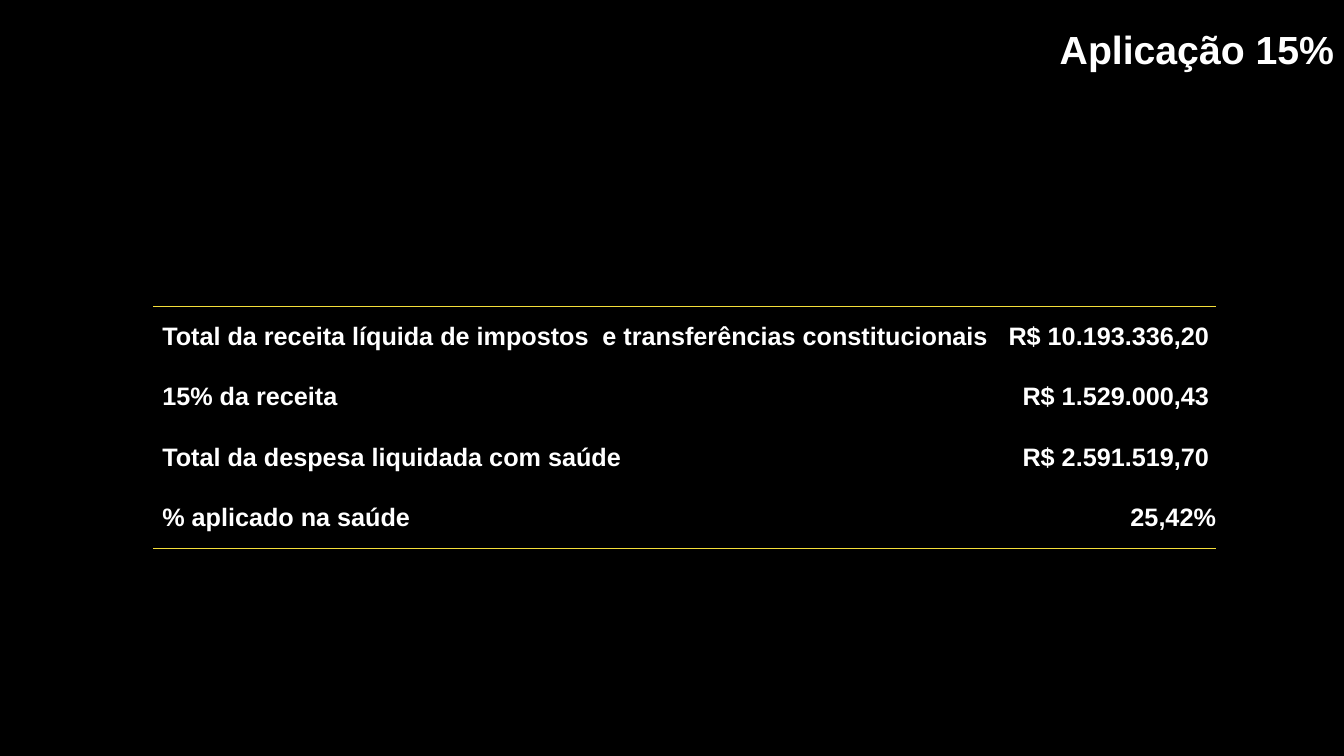
from lxml import etree
from pptx import Presentation
from pptx import util as u
from pptx.dml.color import RGBColor
from pptx.enum import text
from pptx.oxml import ns

BLACK = RGBColor(0x00, 0x00, 0x00)
WHITE = RGBColor(0xFF, 0xFF, 0xFF)
YELLOW = RGBColor(0xF4, 0xDE, 0x3A)

HEALTH_SPENDING = [
    ("Total da receita líquida de impostos  e transferências constitucionais", " R$ 10.193.336,20 "),
    ("15% da receita", " R$ 1.529.000,43 "),
    ("Total da despesa liquidada com saúde", " R$ 2.591.519,70 "),
    ("% aplicado na saúde", "25,42%"),
]


class SlideBuilder:
    font_name = "Arial"

    def __init__(self, slide):
        self.slide = slide
        background = slide.background.fill
        background.solid()
        background.fore_color.rgb = BLACK

    def add_text(self, paragraph, words, size, alignment):
        paragraph.alignment = alignment
        run = paragraph.add_run()
        run.text = words
        run.font.name = self.font_name
        run.font.size = u.Pt(size)
        run.font.bold = True
        run.font.color.rgb = WHITE

    def title(self, words, left, top, width, height):
        shape = self.slide.shapes.title
        shape.left, shape.top = u.Inches(left), u.Inches(top)
        shape.width, shape.height = u.Inches(width), u.Inches(height)
        frame = shape.text_frame
        frame.word_wrap = True
        frame.auto_size = text.MSO_AUTO_SIZE.NONE
        frame.vertical_anchor = text.MSO_ANCHOR.TOP
        self.add_text(frame.paragraphs[0], words, 28, text.PP_ALIGN.RIGHT)

    def borders(self, cell, visible_sides):
        """Draw yellow lines on the named sides (L, R, T, B) and clear the others."""
        properties = cell._tc.get_or_add_tcPr()
        for position, side in enumerate("LRTB"):
            line = etree.Element(ns.qn(f"a:ln{side}"), w=str(u.Pt(1)))
            if side in visible_sides:
                fill = etree.SubElement(line, ns.qn("a:solidFill"))
                etree.SubElement(fill, ns.qn("a:srgbClr"), val=str(YELLOW))
            else:
                etree.SubElement(line, ns.qn("a:noFill"))
            properties.insert(position, line)

    def table(self, rows, left, top, column_widths, row_height):
        shape = self.slide.shapes.add_table(
            len(rows), len(column_widths), u.Inches(left), u.Inches(top),
            u.Inches(sum(column_widths)), u.Inches(row_height * len(rows)))
        table = shape.table
        table.first_row = table.horz_banding = False
        for column, width in zip(table.columns, column_widths):
            column.width = u.Inches(width)
        alignments = (text.PP_ALIGN.LEFT, text.PP_ALIGN.RIGHT)
        for row_index, row in enumerate(rows):
            sides = {0: "T", len(rows) - 1: "B"}.get(row_index, "")
            for column_index, words in enumerate(row):
                cell = table.cell(row_index, column_index)
                cell.fill.background()
                cell.vertical_anchor = text.MSO_ANCHOR.MIDDLE
                cell.margin_top = cell.margin_right = cell.margin_bottom = 0
                cell.margin_left = u.Inches(0 if column_index else 0.09)
                self.borders(cell, sides)
                self.add_text(cell.text_frame.paragraphs[0], words, 18, alignments[column_index])


def main():
    presentation = Presentation()
    presentation.slide_width = u.Inches(13.33)
    presentation.slide_height = u.Inches(7.5)
    title_only = presentation.slide_layouts[5]
    builder = SlideBuilder(presentation.slides.add_slide(title_only))
    builder.title("Aplicação 15%", 2.79, 0.2, 10.54, 0.57)
    builder.table(HEALTH_SPENDING, 1.52, 3.04, (8.35, 2.19), 0.6)
    presentation.save("out.pptx")


if __name__ == "__main__":
    main()
